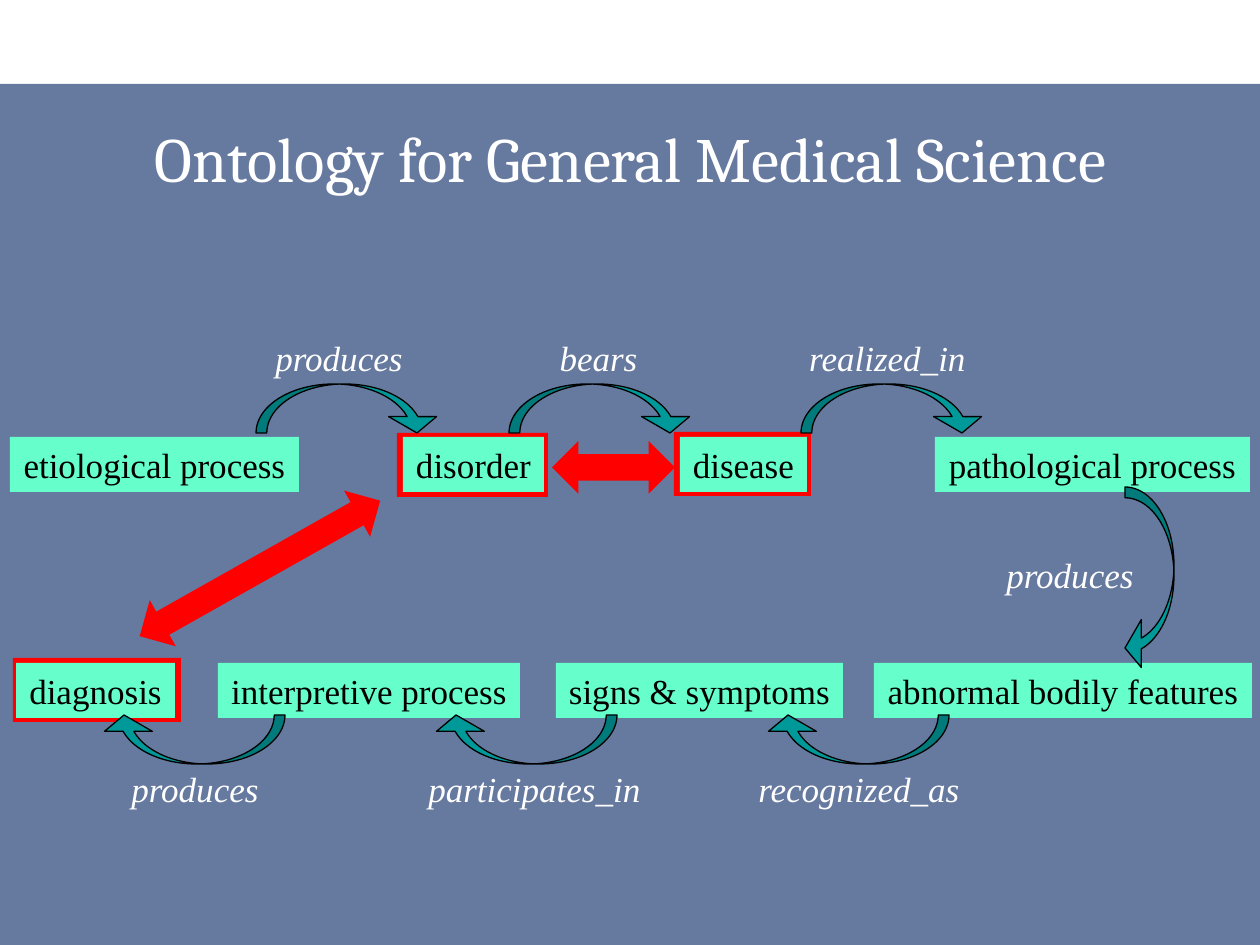
from pptx import Presentation
from pptx import util as u
from pptx.dml.color import RGBColor
from pptx.enum import shapes, text
from pptx.oxml.ns import qn
from lxml import etree

PX = 914400 / 126
WHITE = RGBColor(0xFF, 0xFF, 0xFF)
BLACK = RGBColor(0, 0, 0)
NAVY = RGBColor(0x00, 0x20, 0x60)
RED = RGBColor(0xFF, 0, 0)
MINT = RGBColor(0x66, 0xFF, 0xCC)
TEAL = RGBColor(0, 0x99, 0x99)
KIND = shapes.MSO_SHAPE

TOP_ROW, BOTTOM_ROW, ROW_H = 437, 663, 55

# Terms: wording, left, top, width
TERMS = [
    ("etiological process", 10, TOP_ROW, 289),
    ("disorder", 403, TOP_ROW, 141),
    ("disease", 680, TOP_ROW, 127),
    ("pathological process", 935, TOP_ROW, 315),
    ("abnormal bodily features", 874, BOTTOM_ROW, 378),
    ("signs & symptoms", 556, BOTTOM_ROW, 287),
    ("interpretive process", 218, BOTTOM_ROW, 302),
    ("diagnosis", 16, BOTTOM_ROW, 159),
]

# Red frames behind the key terms: left, top, width
FRAMES = [(674, 432, 137), (13, 658, 168), (397, 433, 151)]

# Relations: wording, label left, top, width, arrow left, top, rotation
RELATIONS = [
    ("produces", 262, 330, 154, 256, 384, 0),
    ("bears", 547, 330, 103, 509, 384, 0),
    ("realized_in", 796, 330, 183, 801, 384, 0),
    ("produces", 118, 761, 154, 100, 715, 180),
    ("participates_in", 415, 761, 239, 432, 715, 180),
    ("recognized_as", 745, 761, 228, 764, 715, 180),
    ("produces", 993, 547, 154, 1057, 555, 90),
]


def px(*lengths):
    return [u.Emu(round(length * PX)) for length in lengths]


def add_filled(slide, kind, box, color, rotation=0):
    shape = slide.shapes.add_shape(kind, *px(*box))
    shape.shadow.inherit = False
    shape.fill.solid()
    shape.fill.fore_color.rgb = color
    shape.line.fill.background()
    shape.rotation = rotation
    return shape


def write(shape, wording, color, size=20, font="Times New Roman", italic=None):
    frame = shape.text_frame
    frame.text = wording
    frame.word_wrap = False
    frame.vertical_anchor = text.MSO_ANCHOR.MIDDLE
    line = frame.paragraphs[0]
    line.alignment = text.PP_ALIGN.CENTER
    style = line.runs[0].font
    style.name, style.size, style.italic = font, u.Pt(size), italic
    style.color.rgb = color


def add_backdrop(slide):
    backdrop = add_filled(slide, KIND.RECTANGLE, (0, 84, 1260, 861), NAVY)
    tint = backdrop.fill._xPr.find(qn("a:solidFill"))[0]
    etree.SubElement(tint, qn("a:alpha"), val="60000")


def add_title(slide, wording):
    title = slide.shapes.add_textbox(*px(32, 105, 1197, 105))
    write(title, wording, WHITE, 36, "Cambria")
    title.text_frame.word_wrap = True


def add_term(slide, wording, left, top, width):
    term = add_filled(slide, KIND.RECTANGLE, (left, top, width, ROW_H), MINT)
    write(term, wording, BLACK)
    term.text_frame.auto_size = text.MSO_AUTO_SIZE.SHAPE_TO_FIT_TEXT


def add_relation(slide, wording, left, top, width, arrow_left, arrow_top, rotation):
    label = slide.shapes.add_textbox(*px(left, top, width, ROW_H))
    write(label, wording, WHITE, italic=True)
    label.text_frame.auto_size = text.MSO_AUTO_SIZE.SHAPE_TO_FIT_TEXT
    arrow = add_filled(slide, KIND.CURVED_DOWN_ARROW,
                       (arrow_left, arrow_top, 185, 49), TEAL, rotation)
    for index, value in enumerate((0.22, 0.978, 0.333)):
        arrow.adjustments[index] = value
    arrow.line.color.rgb = BLACK
    arrow.line.width = u.Pt(0.75)


def main():
    deck = Presentation()
    deck.slide_width, deck.slide_height = u.Inches(10), u.Inches(7.5)
    slide = deck.slides.add_slide(deck.slide_layouts[6])

    add_backdrop(slide)

    # Highlighted terms and the links between them
    for left, top, width in FRAMES:
        add_filled(slide, KIND.RECTANGLE, (left, top, width, 64), RED)
    add_filled(slide, KIND.LEFT_RIGHT_ARROW, (122, 542, 276, 53), RED, 330.6)
    add_filled(slide, KIND.LEFT_RIGHT_ARROW, (552, 441, 123, 53), RED)

    # Chain of terms and relations
    for term in TERMS:
        add_term(slide, *term)
    for relation in RELATIONS:
        add_relation(slide, *relation)

    add_title(slide, "Ontology for General Medical Science")
    deck.save("out.pptx")


if __name__ == "__main__":
    main()
